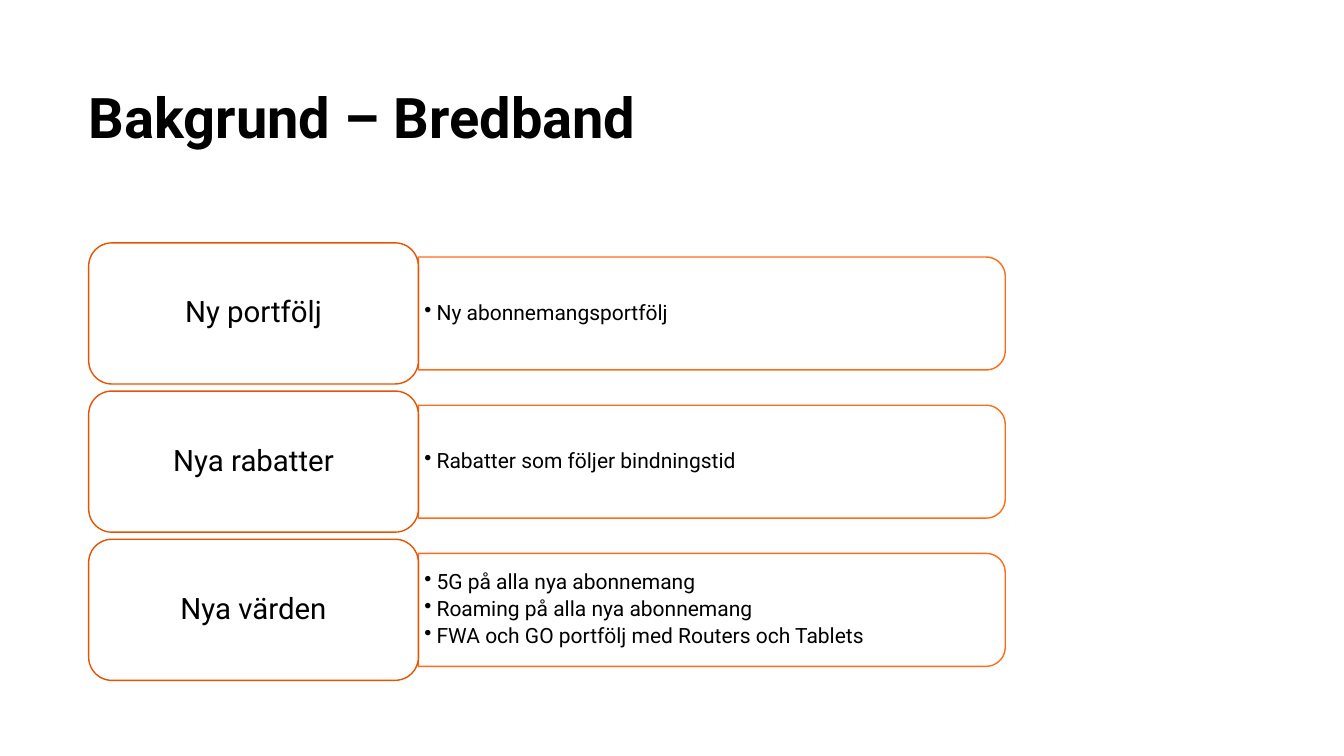
from math import cos, pi, sin

from lxml.etree import SubElement
from pptx import Presentation
from pptx.dml.color import RGBColor
from pptx.enum.shapes import MSO_SHAPE
from pptx.enum.text import MSO_ANCHOR, PP_ALIGN
from pptx.oxml.ns import qn
from pptx.util import Inches, Pt

BLACK = RGBColor(0x00, 0x00, 0x00)
WHITE = RGBColor(0xFF, 0xFF, 0xFF)
ORANGE = RGBColor(0xFF, 0x5C, 0x00)
DARK_ORANGE = RGBColor(0xE7, 0x53, 0x00)

FONT = "Roboto"
LEFT, FIRST_TOP, ROW_STEP = 0.88, 2.41, 1.47
TOPIC_WIDTH, TOPIC_HEIGHT, TOPIC_RADIUS = 3.27, 1.4, 0.23
DETAIL_WIDTH, DETAIL_HEIGHT, DETAIL_RADIUS = 5.82, 1.12, 0.19
ARC_STEPS = 16

ROWS = [
    ("Ny portfölj", ["Ny abonnemangsportfölj"]),
    ("Nya rabatter", ["Rabatter som följer bindningstid"]),
    ("Nya värden", [
        "5G på alla nya abonnemang",
        "Roaming på alla nya abonnemang",
        "FWA och GO portfölj med Routers och Tablets",
    ]),
]


def set_alpha(fill_parent, percent):
    """Make the solid fill directly under an element partly transparent."""
    color = fill_parent.find(qn("a:solidFill"))[0]
    SubElement(color, qn("a:alpha")).set("val", str(percent * 1000))


def style_box(box, outline, opacity):
    """Give a box a translucent white fill and a thin outline."""
    box.shadow.inherit = False
    box.fill.solid()
    box.fill.fore_color.rgb = WHITE
    set_alpha(box.fill._xPr, opacity)
    box.line.color.rgb = outline
    box.line.width = Pt(1)


def write_text(box, lines, size, margins, anchor=MSO_ANCHOR.MIDDLE,
               align=PP_ALIGN.LEFT, space_after=0, bold=False):
    """Write paragraphs into a box and format them."""
    frame = box.text_frame
    frame.word_wrap = True
    frame.vertical_anchor = anchor
    frame.margin_left, frame.margin_top, frame.margin_right, frame.margin_bottom = (
        Inches(margin) for margin in margins)
    frame.text = "\n".join(lines)
    for paragraph in frame.paragraphs:
        paragraph.alignment = align
        paragraph.line_spacing = 0.9
        paragraph.space_after = Pt(space_after)
        for run in paragraph.runs:
            run.font.name = FONT
            run.font.size = Pt(size)
            run.font.bold = bold
            run.font.color.rgb = BLACK


def add_bullets(box):
    """Turn the paragraphs of a box into a hanging bullet list."""
    for paragraph in box.text_frame.paragraphs:
        paragraph.level = 1
        properties = paragraph._p.get_or_add_pPr()
        properties.set("marL", str(Inches(0.12)))
        properties.set("indent", str(Inches(-0.12)))
        SubElement(properties, qn("a:buChar")).set("char", "•")


def add_title(slide, title):
    """Add the bold slide heading."""
    heading = slide.shapes.add_textbox(
        Inches(LEFT), Inches(0.89), Inches(11.58), Inches(0.98))
    write_text(heading, [title], 40, (0, 0, 0, 0), MSO_ANCHOR.TOP, bold=True)


def corner_arc(center_x, center_y, start):
    """Return the points of a quarter turn for a detail box corner."""
    angles = [start + pi / 2 * step / ARC_STEPS for step in range(ARC_STEPS + 1)]
    return [(Inches(center_x + DETAIL_RADIUS * cos(angle)),
             Inches(center_y + DETAIL_RADIUS * sin(angle))) for angle in angles]


def add_details(slide, top, details):
    """Add a bullet box that is rounded only on its right side."""
    left = LEFT + TOPIC_WIDTH
    bottom = top + DETAIL_HEIGHT
    arc_x = left + DETAIL_WIDTH - DETAIL_RADIUS
    outline = slide.shapes.build_freeform(Inches(left), Inches(top))
    outline.add_line_segments(
        corner_arc(arc_x, top + DETAIL_RADIUS, -pi / 2)
        + corner_arc(arc_x, bottom - DETAIL_RADIUS, 0)
        + [(Inches(left), Inches(bottom))], close=True)
    box = outline.convert_to_shape()
    style_box(box, ORANGE, 90)
    set_alpha(box.line._ln, 90)
    write_text(box, details, 15, (0.06, 0.09, 0.12, 0.09), space_after=3)
    add_bullets(box)


def add_topic(slide, top, topic):
    """Add the rounded box that names a row."""
    box = slide.shapes.add_shape(
        MSO_SHAPE.ROUNDED_RECTANGLE, Inches(LEFT), Inches(top),
        Inches(TOPIC_WIDTH), Inches(TOPIC_HEIGHT))
    box.adjustments[0] = TOPIC_RADIUS / TOPIC_HEIGHT
    style_box(box, DARK_ORANGE, 95)
    write_text(box, [topic], 21, (0.16, 0.11, 0.16, 0.11),
               align=PP_ALIGN.CENTER, space_after=9)


def main():
    """Build the slide and save it."""
    presentation = Presentation()
    presentation.slide_width = Inches(13.33)
    presentation.slide_height = Inches(7.5)
    slide = presentation.slides.add_slide(presentation.slide_layouts[6])
    for index, (topic, details) in enumerate(ROWS):
        top = FIRST_TOP + index * ROW_STEP
        add_details(slide, top + (TOPIC_HEIGHT - DETAIL_HEIGHT) / 2, details)
        add_topic(slide, top, topic)
    add_title(slide, "Bakgrund – Bredband")
    presentation.save("out.pptx")


if __name__ == "__main__":
    main()
